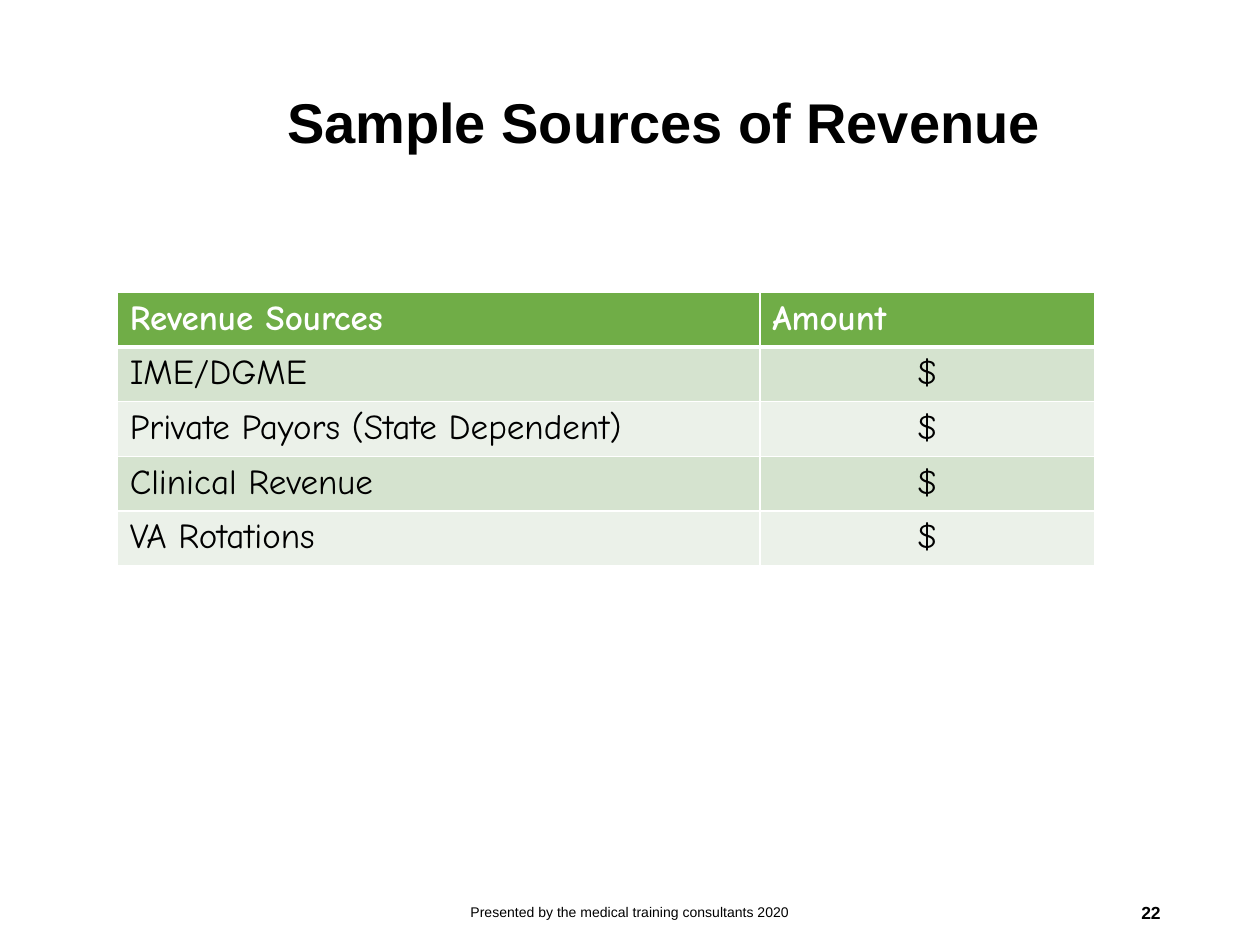
import pptx
import pptx.dml.color
import pptx.enum.text
import pptx.oxml
import pptx.oxml.ns
import pptx.util
from dataclasses import dataclass

Inches = pptx.util.Inches
Pt = pptx.util.Pt
ALIGN = pptx.enum.text.PP_ALIGN
MIDDLE = pptx.enum.text.MSO_ANCHOR.MIDDLE


@dataclass(frozen=True)
class Theme:
    """Colours, fonts and type sizes of the slide."""
    text: str = "000000"
    light: str = "FFFFFF"
    header: str = "70AD47"
    bands: tuple = ("D5E3CF", "EBF1E9")
    sans: str = "Arial"
    hand: str = "Comic Neue"
    title_size: int = 32
    table_size: int = 20
    footer_size: int = 8
    number_size: int = 10


THEME = Theme()
REVENUE_ROWS = [
    ("Revenue Sources", "Amount"),
    ("IME/DGME", "$"),
    ("Private Payors (State Dependent)", "$"),
    ("Clinical Revenue", "$"),
    ("VA Rotations", "$"),
]


def rgb(colour):
    """Return the colour object for a hex string."""
    return pptx.dml.color.RGBColor.from_string(colour)


def write(paragraph, text, size, font, colour=THEME.text, bold=False, **layout):
    """Put one formatted run in a paragraph and apply its layout values."""
    run = paragraph.add_run()
    run.text = text
    for name, value in {"size": Pt(size), "name": font, "bold": bold}.items():
        setattr(run.font, name, value)
    run.font.color.rgb = rgb(colour)
    for name, value in layout.items():
        setattr(paragraph, name, value)


def add_text(slide, box, text, size, margin=0.05, **style):
    """Add a vertically centred, wrapping text box."""
    frame = slide.shapes.add_textbox(*map(Inches, box)).text_frame
    settings = {
        "word_wrap": True, "vertical_anchor": MIDDLE,
        "margin_left": Inches(0.1), "margin_right": Inches(0.1),
        "margin_top": Inches(margin), "margin_bottom": Inches(margin),
    }
    for name, value in settings.items():
        setattr(frame, name, value)
    write(frame.paragraphs[0], text, size, THEME.sans, **style)


def add_borders(cell, bottom, top):
    """Give a cell white borders, with its own bottom and top widths."""
    properties = cell._tc.get_or_add_tcPr()
    widths = {"lnL": 1, "lnR": 1, "lnT": top, "lnB": bottom}
    for position, (tag, width) in enumerate(widths.items()):
        line = pptx.oxml.parse_xml(
            f'<a:{tag} {pptx.oxml.ns.nsdecls("a")} w="{Pt(width)}">'
            f'<a:solidFill><a:srgbClr val="{THEME.light}"/></a:solidFill></a:{tag}>'
        )
        properties.insert(position, line)


def add_revenue_table(slide, box, rows, column_widths):
    """Add the revenue table with a header row and banded body rows."""
    frame = slide.shapes.add_table(len(rows), len(column_widths), *map(Inches, box))
    table = frame.table
    for column, width in zip(table.columns, column_widths):
        column.width = Inches(width)
    for row_index, values in enumerate(rows):
        is_header = row_index == 0
        table.rows[row_index].height = Inches(box[3] / len(rows))
        fill = THEME.header if is_header else THEME.bands[(row_index - 1) % 2]
        for column_index, value in enumerate(values):
            cell = table.cell(row_index, column_index)
            cell.fill.solid()
            cell.fill.fore_color.rgb = rgb(fill)
            add_borders(cell, 3 if is_header else 1, 3 if row_index == 1 else 1)
            centred = column_index == 1 and not is_header
            write(
                cell.text_frame.paragraphs[0], value, THEME.table_size, THEME.hand,
                colour=THEME.light if is_header else THEME.text, bold=is_header,
                alignment=ALIGN.CENTER if centred else ALIGN.LEFT,
            )


def add_footer(slide, box, credit, number):
    """Add the centred credit and the right-aligned slide number."""
    left, top, width, height = box
    add_text(slide, (left, top, 3.38, height), credit, THEME.footer_size,
             alignment=ALIGN.CENTER)
    number_width = 2.25
    number_box = (left + width - number_width, top, number_width, height)
    add_text(slide, number_box, number, THEME.number_size, bold=True,
             alignment=ALIGN.RIGHT, space_after=Pt(6))


def main():
    """Build and save the presentation."""
    presentation = pptx.Presentation()
    presentation.slide_width = Inches(10)
    presentation.slide_height = Inches(7.5)
    slide = presentation.slides.add_slide(presentation.slide_layouts[6])
    add_text(slide, (2.18, 0.27, 7.14, 1.45), "Sample Sources of Revenue",
             THEME.title_size, margin=0.1, bold=True, line_spacing=0.9)
    add_revenue_table(slide, (0.93, 2.32, 7.76, 2.1), REVENUE_ROWS, (5.1, 2.66))
    add_footer(slide, (3.31, 7.04, 6, 0.4),
               "Presented by the medical training consultants 2020", "22")
    presentation.save("out.pptx")


if __name__ == "__main__":
    main()
